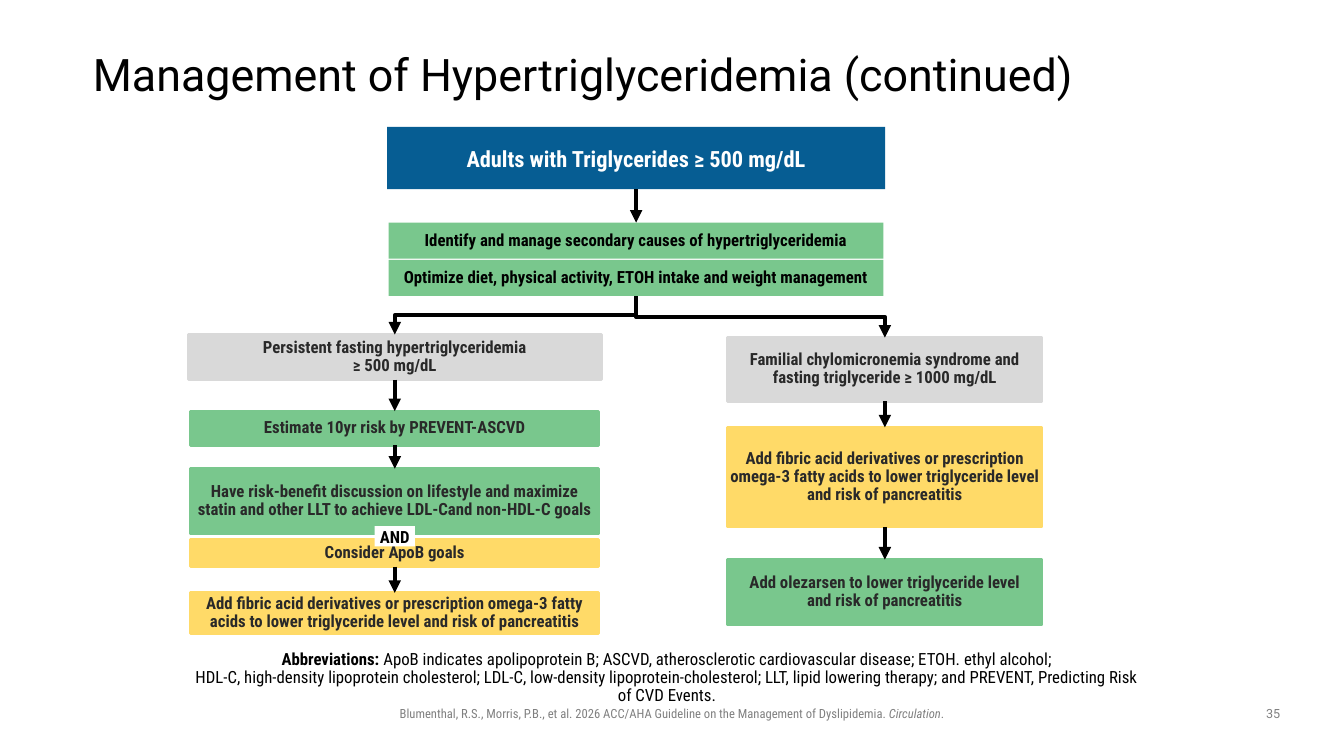
from dataclasses import dataclass

from lxml import etree
from pptx import Presentation
from pptx.dml.color import RGBColor
from pptx.enum import shapes, text
from pptx.oxml import ns
from pptx.util import Cm, Pt

COLORS = {
    "blue": "065D93", "green": "79C78D", "yellow": "FFDA68", "gray": "D9D9D9",
    "white": "FFFFFF", "black": "000000", "ink": "292929", "muted": "808080",
}
CONDENSED = "Roboto Condensed"

# Centre lines of the flow chart, in cm
TRUNK, PERSISTENT, FAMILIAL = 16.03, 9.95, 22.3


@dataclass
class Step:
    words: str
    axis: float
    top: float
    width: float
    height: float
    fill: str
    ink: str = "ink"
    size: int = 12
    outlined: bool = True
    spacing: float = 0.9


@dataclass
class Caption:
    runs: list[tuple[str, dict]]
    left: float
    top: float
    width: float
    height: float
    size: int
    color: str = "black"
    font: str = CONDENSED
    align: text.PP_ALIGN = text.PP_ALIGN.CENTER
    anchor: text.MSO_ANCHOR = text.MSO_ANCHOR.TOP
    insets: tuple = (0.25, 0.13, 0.25, 0.13)
    spacing: float = 1.0


FIBRIC = ("Add fibric acid derivatives or prescription omega-3 fatty acids "
          "to lower triglyceride level and risk of pancreatitis")

STEPS = {
    "adults": Step("Adults with Triglycerides ≥ 500 mg/dL", TRUNK, 3.2, 12.55, 1.57,
                   "blue", "white", 16, False, 1.0),
    "causes": Step("Identify and manage secondary causes of hypertriglyceridemia",
                   TRUNK, 5.61, 12.47, 0.91, "green", "black", outlined=False),
    "diet": Step("Optimize diet, physical activity, ETOH intake and weight management",
                 TRUNK, 6.55, 12.47, 0.91, "green", "black", outlined=False),
    "persistent": Step("Persistent fasting hypertriglyceridemia\n≥ 500 mg/dL",
                       PERSISTENT, 8.43, 10.41, 1.14, "gray"),
    "risk": Step("Estimate 10yr risk by PREVENT-ASCVD", PERSISTENT, 10.36, 10.29, 0.86, "green"),
    "discussion": Step("Have risk-benefit discussion on lifestyle and maximize statin and "
                       "other LLT to achieve LDL-Cand non-HDL-C goals",
                       PERSISTENT, 11.81, 10.29, 1.65, "green"),
    "apob": Step("Consider ApoB goals", PERSISTENT, 13.59, 10.29, 0.69, "yellow"),
    "fibric_left": Step(FIBRIC, PERSISTENT, 14.94, 10.29, 1.02, "yellow"),
    "familial": Step("Familial chylomicronemia syndrome and fasting triglyceride ≥ 1000 mg/dL",
                     FAMILIAL, 8.51, 7.92, 1.6, "gray"),
    "fibric_right": Step(FIBRIC, FAMILIAL, 10.77, 7.92, 2.51, "yellow"),
    "olezarsen": Step("Add olezarsen to lower triglyceride level\nand risk of pancreatitis",
                      FAMILIAL, 14.1, 7.92, 1.65, "green"),
    "and": Step("AND", PERSISTENT, 13.26, 1.02, 0.51, "white", "black",
                outlined=False, spacing=1.0),
}

ARROWS = [
    ("adults", "causes"), ("persistent", "risk"), ("risk", "discussion"),
    ("apob", "fibric_left"), ("familial", "fibric_right"), ("fibric_right", "olezarsen"),
]
BRANCHES = [("diet", "persistent"), ("diet", "familial")]

CAPTIONS = [
    Caption([("Blumenthal, R.S., Morris, P.B., et al. 2026 ACC/AHA Guideline on the "
              "Management of Dyslipidemia. ", {}), ("Circulation", {"italic": True}), (".", {})],
            5.99, 17.65, 21.89, 0.64, 9, "muted"),
    Caption([("Management of Hypertriglyceridemia (continued)", {})],
            2.34, 1.02, 29.21, 1.83, 32, font="Roboto", align=text.PP_ALIGN.LEFT,
            anchor=text.MSO_ANCHOR.MIDDLE, insets=(0, 0, 0, 0), spacing=0.9),
    Caption([("Abbreviations: ", {"bold": True}),
             ("ApoB indicates apolipoprotein B; ASCVD, atherosclerotic cardiovascular disease; "
              "ETOH. ethyl alcohol;", {}), ("\n", {}),
             ("HDL-C, high-density lipoprotein cholesterol; LDL-C, low-density "
              "lipoprotein-cholesterol; LLT, lipid lowering therapy; and PREVENT, "
              "Predicting Risk of CVD Events.", {})],
            4.78, 16.74, 24.31, 1.17, 12, anchor=text.MSO_ANCHOR.BOTTOM,
            insets=(0, 0.13, 0.25, 0.13), spacing=0.9),
    Caption([("35", {})], 31.55, 17.65, 1.07, 0.66, 9, "muted", "Roboto"),
]


def color(name: str) -> RGBColor:
    return RGBColor.from_string(COLORS[name])


def set_frame(frame, anchor, insets) -> None:
    frame.word_wrap = True
    frame.vertical_anchor = anchor
    (frame.margin_left, frame.margin_top,
     frame.margin_right, frame.margin_bottom) = map(Cm, insets)


def set_font(font, name: str, size: int, ink: str, bold: bool) -> None:
    font.name, font.size, font.bold = name, Pt(size), bold
    font.color.rgb = color(ink)


def draw_caption(slide, caption: Caption) -> None:
    box = slide.shapes.add_textbox(Cm(caption.left), Cm(caption.top),
                                   Cm(caption.width), Cm(caption.height))
    set_frame(box.text_frame, caption.anchor, caption.insets)
    line = box.text_frame.paragraphs[0]
    line.alignment, line.line_spacing = caption.align, caption.spacing
    set_font(line.font, caption.font, caption.size, caption.color, False)
    for words, style in caption.runs:
        if words == "\n":
            line.add_line_break()
            continue
        run = line.add_run()
        run.text = words
        for key, value in style.items():
            setattr(run.font, key, value)


def draw_step(slide, step: Step):
    box = slide.shapes.add_shape(shapes.MSO_SHAPE.RECTANGLE, Cm(step.axis - step.width / 2),
                                 Cm(step.top), Cm(step.width), Cm(step.height))
    box.shadow.inherit = False
    box.fill.solid()
    box.fill.fore_color.rgb = color(step.fill)
    if step.outlined:
        box.line.color.rgb = color(step.fill)
        box.line.width = Pt(2)
    else:
        box.line.fill.background()
    set_frame(box.text_frame, text.MSO_ANCHOR.MIDDLE, (0, 0, 0, 0))
    line = box.text_frame.paragraphs[0]
    line.text = step.words
    line.alignment, line.line_spacing = text.PP_ALIGN.CENTER, step.spacing
    set_font(line.font, CONDENSED, step.size, step.ink, True)
    return box


def style_arrow(arrow) -> None:
    arrow.line.color.rgb = color("black")
    arrow.line.width = Pt(3)
    etree.SubElement(arrow.line._get_or_add_ln(), ns.qn("a:tailEnd"), type="triangle")
    etree.SubElement(arrow._element.spPr, ns.qn("a:effectLst"))


def draw_arrow(slide, source, target) -> None:
    arrow = slide.shapes.add_connector(shapes.MSO_CONNECTOR.STRAIGHT, 0, 0, 0, 0)
    arrow.begin_connect(source, 2)
    arrow.end_connect(target, 0)
    style_arrow(arrow)


def draw_branch(slide, source: Step, target: Step) -> None:
    """Elbow that leaves downwards: a sideways elbow turned by a quarter."""
    start = source.top + source.height
    across, down = target.axis - source.axis, target.top - start
    middle_x, middle_y = source.axis + across / 2, start + down / 2
    turn = 1 if across < 0 else -1
    arrow = slide.shapes.add_connector(
        shapes.MSO_CONNECTOR.ELBOW,
        Cm(middle_x - turn * down / 2), Cm(middle_y - abs(across) / 2),
        Cm(middle_x + turn * down / 2), Cm(middle_y + abs(across) / 2))
    arrow._element.spPr.xfrm.set("rot", str(turn * 90 * 60000 % 21600000))
    style_arrow(arrow)


def main() -> None:
    deck = Presentation()
    deck.slide_width, deck.slide_height = Cm(33.87), Cm(19.05)
    slide = deck.slides.add_slide(deck.slide_layouts[6])

    # Title, abbreviations, citation and page number
    for caption in CAPTIONS:
        draw_caption(slide, caption)

    # Flow chart
    boxes = {key: draw_step(slide, step) for key, step in STEPS.items()}
    for source, target in ARROWS:
        draw_arrow(slide, boxes[source], boxes[target])
    for source, target in BRANCHES:
        draw_branch(slide, STEPS[source], STEPS[target])

    deck.save("out.pptx")


if __name__ == "__main__":
    main()
